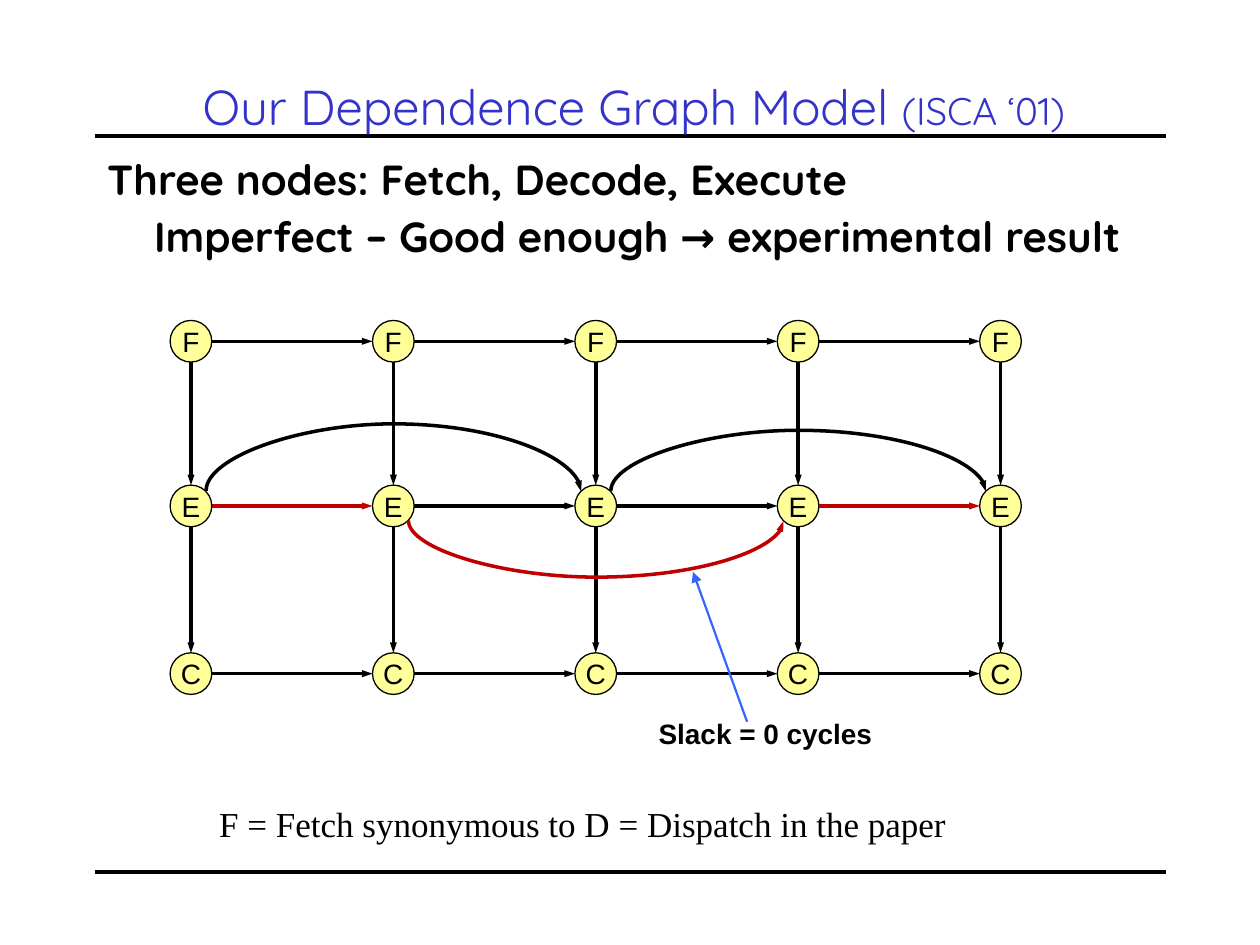
from dataclasses import dataclass

from lxml import etree
from pptx import Presentation
from pptx import util as u
from pptx.dml.color import RGBColor
from pptx.enum import shapes, text
from pptx.oxml.ns import qn


@dataclass(frozen=True)
class Theme:
    ink: str = "000000"
    title: str = "3333CC"
    node: str = "FFFF99"
    critical: str = "C00000"
    pointer: str = "3366FF"
    display_font: str = "Quicksand"
    label_font: str = "Arial"
    note_font: str = "Times New Roman"
    title_size: float = 28
    venue_size: float = 22
    body_size: float = 24
    label_size: float = 16
    note_size: float = 20
    rule_width: float = 2.25
    edge_width: float = 2
    pointer_width: float = 1.25
    node_outline: float = 0.75


THEME = Theme()
COLUMNS = [3.85 + 4.08 * i for i in range(5)]
ROWS = {"F": 6.88, "E": 10.2, "C": 13.58}
RADIUS = 0.42
DIAGONAL = 0.3
CURVE_DEPTH = 0.01


def rgb(colour):
    return RGBColor.from_string(colour)


def style_run(run, font, size, colour=THEME.ink, bold=False):
    run.font.name = font
    run.font.size = u.Pt(size)
    run.font.color.rgb = rgb(colour)
    run.font.bold = bold


def add_text(slide, box, lines, font, size, bold=False, align=None):
    frame = slide.shapes.add_textbox(*map(u.Cm, box)).text_frame
    frame.word_wrap = True
    frame.text = "\n".join(lines)
    for paragraph in frame.paragraphs:
        paragraph.alignment = align
        style_run(paragraph.runs[0], font, size, bold=bold)
    return frame


def style_line(connector, colour, width, head_width=None):
    connector.line.color.rgb = rgb(colour)
    connector.line.width = u.Pt(width)
    properties = connector._element.spPr
    if head_width:
        etree.SubElement(connector.line._get_or_add_ln(), qn("a:tailEnd"),
                         type="triangle", w=head_width, len="med")
    etree.SubElement(properties, qn("a:effectLst"))


def add_line(slide, start, end, colour=THEME.ink, width=THEME.edge_width, head_width="sm"):
    line = slide.shapes.add_connector(
        shapes.MSO_CONNECTOR.STRAIGHT, *map(u.Cm, (*start, *end)))
    style_line(line, colour, width, head_width)


def add_arc(slide, left, right, y, bulge, colour=THEME.ink):
    span = right - left
    x, top = (left + right) / 2, y - span / 2
    arc = slide.shapes.add_connector(
        shapes.MSO_CONNECTOR.CURVE,
        *map(u.Cm, (x, top + span, x + CURVE_DEPTH, top)))
    arc.rotation = 90
    guides = arc._element.spPr.find(qn("a:prstGeom")).get_or_add_avLst()
    etree.SubElement(guides, qn("a:gd"), name="adj1",
                     fmla=f"val {round(bulge / CURVE_DEPTH * 100000)}")
    style_line(arc, colour, THEME.edge_width, "sm")


def add_node(slide, x, y, letter):
    node = slide.shapes.add_shape(
        shapes.MSO_SHAPE.OVAL,
        *map(u.Cm, (x - RADIUS, y - RADIUS, 2 * RADIUS, 2 * RADIUS)))
    node.shadow.inherit = False
    node.fill.solid()
    node.fill.fore_color.rgb = rgb(THEME.node)
    node.line.color.rgb = rgb(THEME.ink)
    node.line.width = u.Pt(THEME.node_outline)
    frame = node.text_frame
    frame.word_wrap = False
    frame.vertical_anchor = text.MSO_ANCHOR.MIDDLE
    frame.text = letter
    frame.paragraphs[0].alignment = text.PP_ALIGN.CENTER
    style_run(frame.paragraphs[0].runs[0], THEME.label_font, THEME.label_size)


def add_headings(slide):
    for y in (2.74, 17.58):
        add_line(slide, (1.91, y), (23.5, y), width=THEME.rule_width, head_width=None)
    title = add_text(slide, (2.11, 1.07, 21.34, 2.13), ["Our Dependence Graph Model "],
                     THEME.display_font, THEME.title_size, align=text.PP_ALIGN.CENTER)
    title.vertical_anchor = text.MSO_ANCHOR.MIDDLE
    heading = title.paragraphs[0]
    heading.runs[0].font.color.rgb = rgb(THEME.title)
    venue = heading.add_run()
    venue.text = "(ISCA ‘01)"
    style_run(venue, THEME.display_font, THEME.venue_size, THEME.title)

    body = add_text(slide, (1.91, 2.97, 21.59, 14.4),
                    ["Three nodes: Fetch, Decode, Execute",
                     "Imperfect – Good enough → experimental result"],
                    THEME.display_font, THEME.body_size, bold=True)
    result = body.paragraphs[1]
    result.space_before = u.Pt(4)
    result._p.get_or_add_pPr().set("marL", str(u.Cm(0.95)))


def add_graph(slide):
    for letter, y in ROWS.items():
        for x in COLUMNS:
            add_node(slide, x, y, letter)
        for step, (x, following) in enumerate(zip(COLUMNS, COLUMNS[1:])):
            critical = letter == "E" and step in (0, 3)
            add_line(slide, (x + RADIUS, y), (following - RADIUS, y),
                     THEME.critical if critical else THEME.ink)
    levels = list(ROWS.values())
    for x in COLUMNS:
        for upper, lower in zip(levels, levels[1:]):
            add_line(slide, (x, upper + RADIUS), (x, lower - RADIUS))

    for source, bulge, colour in ((0, -1.35, THEME.ink),
                                  (2, -1.22, THEME.ink),
                                  (1, 1.14, THEME.critical)):
        side = DIAGONAL if bulge > 0 else -DIAGONAL
        add_arc(slide, COLUMNS[source] + DIAGONAL, COLUMNS[source + 2] - DIAGONAL,
                ROWS["E"] + side, bulge, colour)


def add_notes(slide):
    add_line(slide, (15.06, 14.55), (13.97, 11.53), THEME.pointer,
             THEME.pointer_width, "med")
    add_text(slide, (12.98, 14.33, 4.9, 0.94), ["Slack = 0 cycles"],
             THEME.label_font, THEME.label_size, bold=True, align=text.PP_ALIGN.CENTER)
    add_text(slide, (4.17, 16.05, 15.27, 1.12),
             ["F = Fetch synonymous to D = Dispatch in the paper"],
             THEME.note_font, THEME.note_size)


def main():
    deck = Presentation()
    deck.slide_width, deck.slide_height = u.Cm(25.4), u.Cm(19.05)
    slide = deck.slides.add_slide(deck.slide_layouts[6])
    add_headings(slide)
    add_graph(slide)
    add_notes(slide)
    deck.save("out.pptx")


if __name__ == "__main__":
    main()
